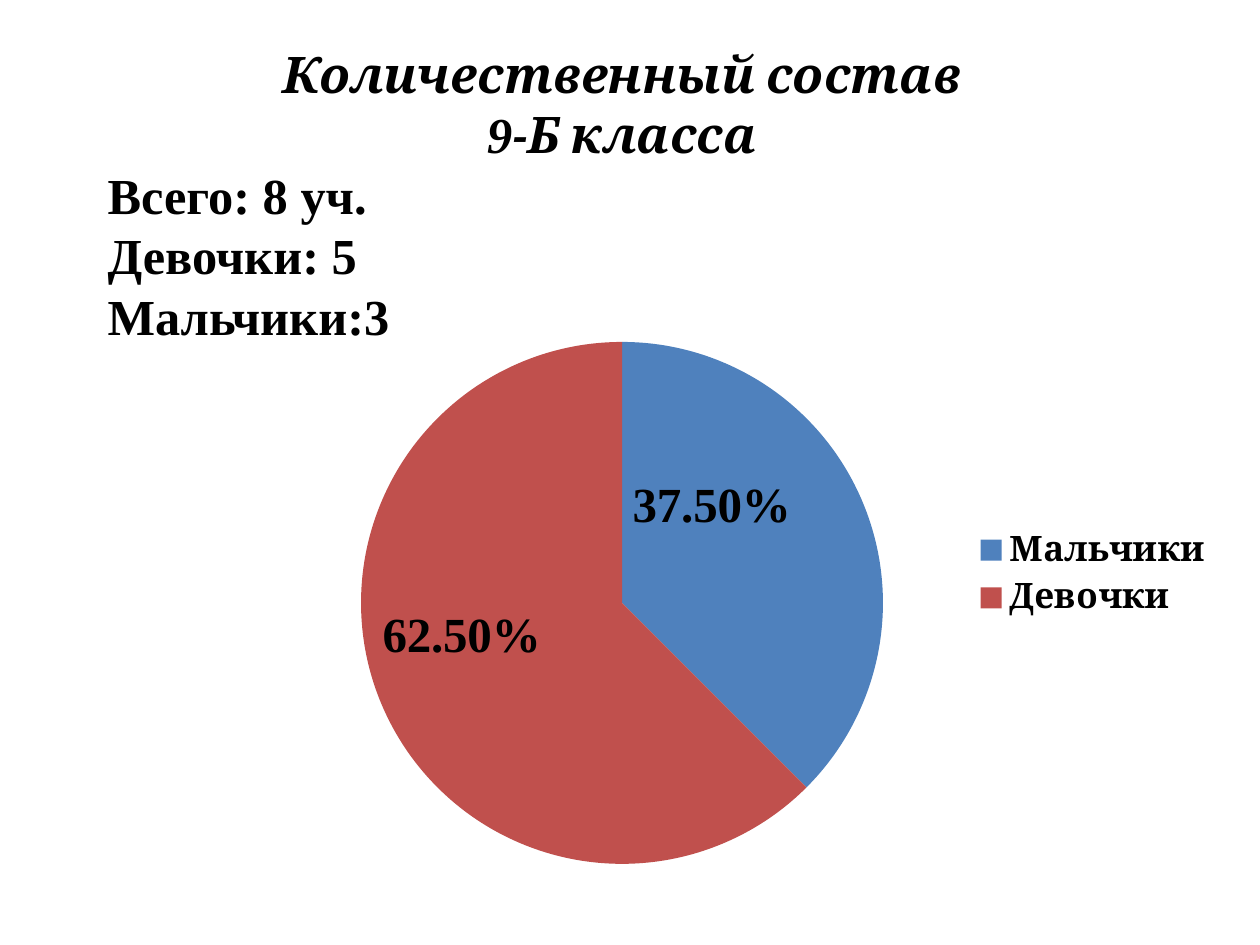
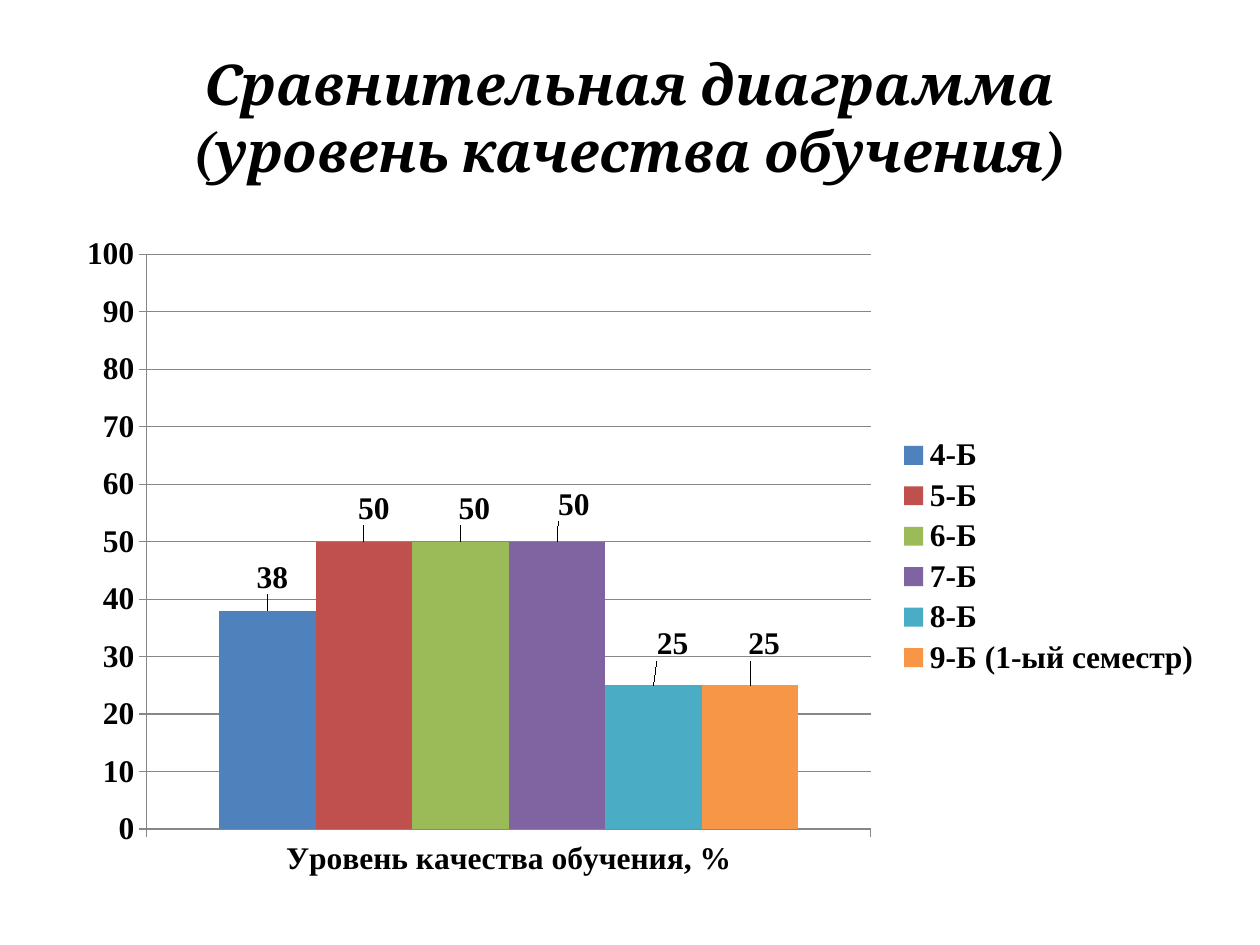
from lxml.etree import SubElement, Element
from pptx import Presentation
from pptx.chart.data import CategoryChartData
from pptx.dml.color import RGBColor
from pptx.enum.chart import XL_CHART_TYPE, XL_LABEL_POSITION, XL_LEGEND_POSITION, XL_TICK_MARK
from pptx.enum.text import MSO_ANCHOR, MSO_AUTO_SIZE, PP_ALIGN
from pptx.oxml.ns import qn
from pptx.util import Pt

PX = 914400 / 126
COLORS = {
    "text": "000000", "line": "878787",
    "blue": "4F81BD", "red": "C0504D", "green": "9BBB59",
    "purple": "8064A2", "aqua": "4BACC6", "orange": "F79646",
}
HEADING, BODY = "Cambria", "Times New Roman"
TITLE_ONLY = 5


def style(font, **values):
    """Set font attributes; text is black and bold unless stated otherwise."""
    for name, value in {"bold": True, **values}.items():
        setattr(font, name, value)
    font.color.rgb = RGBColor.from_string(COLORS["text"])


def add_layout(parent, index, **values):
    """Insert a manual chart layout, given as fractions of the chart."""
    layout = Element(qn("c:layout"))
    manual = SubElement(layout, qn("c:manualLayout"))
    for name, value in values.items():
        SubElement(manual, qn(f"c:{name}")).set("val", str(value))
    parent.insert(index, layout)


deck = Presentation()
deck.slide_width, deck.slide_height = round(1260 * PX), round(945 * PX)

# Each title paragraph is an alignment and its (text, font, italic) spans
pages = [
    {
        "title_at": (95, 106, 1124, 237), "title_size": 28.8,
        "title": [
            (PP_ALIGN.CENTER, [("Количественный состав", HEADING, True)]),
            (PP_ALIGN.CENTER, [("9", BODY, True), ("-Б класса", HEADING, True)]),
            (PP_ALIGN.LEFT, [("Всего: 8 уч.", BODY, False)]),
            (PP_ALIGN.LEFT, [("Девочки: 5", BODY, False)]),
            (PP_ALIGN.LEFT, [("Мальчики:3", BODY, False)]),
        ],
        "chart_at": (184, 284, 1043, 580), "type": XL_CHART_TYPE.PIE, "format": "0.00%",
        "categories": ["Мальчики", "Девочки"],
        "series": [("Series 1", [0.375, 0.625])],
        "legend": {"size": Pt(20), "name": HEADING},
        "label": {"size": Pt(28), "name": BODY},
        "label_position": XL_LABEL_POSITION.CENTER,
        "label_shifts": [(-31, -47), (-40, -17)],
    },
    {
        "title_at": (63, 38, 1134, 158), "title_size": 32,
        "title": [
            (PP_ALIGN.CENTER,
             [("Сравнительная диаграмма (уровень качества обучения)", HEADING, True)]),
        ],
        "chart_at": (64, 224, 1150, 665), "type": XL_CHART_TYPE.COLUMN_CLUSTERED,
        "format": "General",
        "categories": ["Уровень качества обучения, %"],
        "series": [("4-Б", [38]), ("5-Б", [50]), ("6-Б", [50]), ("7-Б", [50]),
                   ("8-Б", [25]), ("9-Б (1-ый семестр)", [25])],
        "legend": {"size": Pt(18), "name": BODY},
        "label": {"size": Pt(18), "name": BODY},
        "label_position": XL_LABEL_POSITION.OUTSIDE_END,
        "label_shifts": [(5, -11), (10, -11), (14, -11), (17, -15), (19, -19), (14, -19)],
    },
]
fills = [COLORS[name] for name in ("blue", "red", "green", "purple", "aqua", "orange")]
charts = []

for page in pages:
    slide = deck.slides.add_slide(deck.slide_layouts[TITLE_ONLY])
    title = slide.shapes.title
    title.left, title.top, title.width, title.height = (round(v * PX) for v in page["title_at"])
    frame = title.text_frame
    frame.word_wrap = True
    frame.auto_size = MSO_AUTO_SIZE.NONE
    frame.vertical_anchor = MSO_ANCHOR.MIDDLE
    for number, (alignment, spans) in enumerate(page["title"]):
        para = frame.add_paragraph() if number else frame.paragraphs[0]
        para.alignment = alignment
        for text, font_name, italic in spans:
            span = para.add_run()
            span.text = text
            style(span.font, name=font_name, size=Pt(page["title_size"]), italic=italic)

    data = CategoryChartData(number_format=page["format"])
    data.categories = page["categories"]
    for name, values in page["series"]:
        data.add_series(name, values)
    box = [round(v * PX) for v in page["chart_at"]]
    chart = slide.shapes.add_chart(page["type"], *box, data).chart
    charts.append(chart)
    chart.has_title = False
    style(chart.font, name="Calibri", size=Pt(18), bold=False)
    chart.has_legend = True
    chart.legend.position = XL_LEGEND_POSITION.RIGHT
    chart.legend.include_in_layout = False
    style(chart.legend.font, **page["legend"])

    plot = chart.plots[0]
    is_pie = page["type"] == XL_CHART_TYPE.PIE
    plot.vary_by_categories = is_pie
    points = [point for series in plot.series
              for point in (series.points[i] for i in range(len(series.values)))]
    if not is_pie:
        for series, fill in zip(plot.series, fills):
            series.format.fill.solid()
            series.format.fill.fore_color.rgb = RGBColor.from_string(fill)
    else:
        for point, fill in zip(points, fills):
            point.format.fill.solid()
            point.format.fill.fore_color.rgb = RGBColor.from_string(fill)

    for series in plot.series:
        labels = series.data_labels
        labels.show_value = True
        labels.number_format = page["format"]
        labels.number_format_is_linked = False
        labels.position = page["label_position"]
        style(labels.font, **page["label"])
    for point in points:
        style(point.data_label.font, **page["label"])
        point.data_label.position = page["label_position"]
    label_nodes = [node for series in plot.series
                   for node in series._element.iter(qn("c:dLbl"))]
    width, height = page["chart_at"][2:]
    for node, (right, down) in zip(label_nodes, page["label_shifts"]):
        add_layout(node, 1, x=right / width, y=down / height)

class_chart, quality_chart = charts

# The class title leaves room on the right and below its five lines
class_frame = deck.slides[0].shapes.title.text_frame
class_frame.margin_right = round(82 * PX)
class_frame.margin_bottom = round(67 * PX)

plot_area = class_chart._chartSpace.find(f".//{qn('c:plotArea')}")
for layout in plot_area.findall(qn("c:layout")):
    plot_area.remove(layout)
add_layout(plot_area, 0, layoutTarget="inner", xMode="edge", yMode="edge",
           x=0.07, y=0.1, w=0.7, h=0.9)

quality_chart.plots[0].gap_width = 150
quality_chart.plots[0].overlap = 0
value_axis = quality_chart.value_axis
value_axis.minimum_scale, value_axis.maximum_scale, value_axis.major_unit = 0, 100, 10
value_axis.has_major_gridlines = True
line_color = RGBColor.from_string(COLORS["line"])
value_axis.major_gridlines.format.line.color.rgb = line_color
for axis in (quality_chart.category_axis, value_axis):
    axis.major_tick_mark = XL_TICK_MARK.OUTSIDE
    axis.format.line.color.rgb = line_color
    style(axis.tick_labels.font, name=BODY, size=Pt(18))

deck.save("out.pptx")
